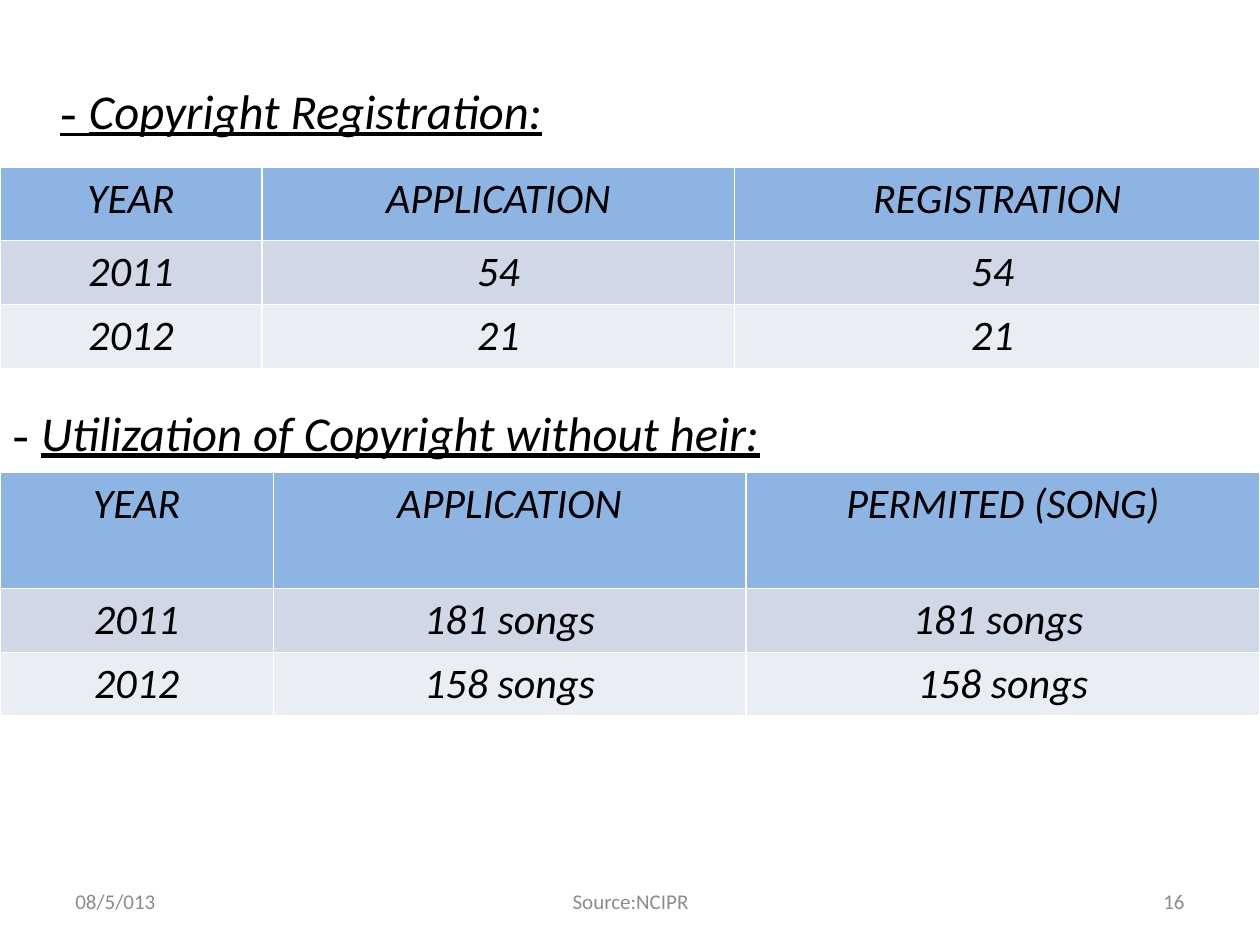
from lxml import etree
from pptx import Presentation
from pptx.dml.color import RGBColor
from pptx.enum.text import MSO_ANCHOR, MSO_AUTO_SIZE, PP_ALIGN
from pptx.oxml.ns import qn
from pptx.util import Inches, Pt

LEFT, CENTER, RIGHT = PP_ALIGN.LEFT, PP_ALIGN.CENTER, PP_ALIGN.RIGHT
MIDDLE = MSO_ANCHOR.MIDDLE
NO_AUTOFIT = MSO_AUTO_SIZE.NONE

BLACK = RGBColor(0x00, 0x00, 0x00)
GREY = RGBColor(0x8C, 0x8C, 0x8C)
HEADER_BLUE = RGBColor(0x8E, 0xB4, 0xE3)
BAND_DARK = RGBColor(0xD0, 0xD8, 0xE8)
BAND_LIGHT = RGBColor(0xE9, 0xED, 0xF4)
ROW_FILLS = [HEADER_BLUE, BAND_DARK, BAND_LIGHT]


def style_run(r, size, color, font="Calibri", italic=False, underline=False):
    r.font.size = Pt(size)
    r.font.name = font
    r.font.color.rgb = color
    r.font.bold = False
    r.font.italic = italic
    r.font.underline = underline


prs = Presentation()
prs.slide_width, prs.slide_height = Inches(10), Inches(7.5)
s = prs.slides.add_slide(prs.slide_layouts[1])
title = s.shapes.title
title.element.getparent().remove(title.element)

# Headings: text, left margin, first-line indent, space before, dash emphasised
headings = [
    ("Copyright Registration:", 0.38, 0, 0, True),
    ("Utilization of Copyright without heir:", 0.38, -0.38, 150.5, False),
]
body = s.placeholders[1]
body.left, body.top = Inches(0), Inches(0)
body.width, body.height = Inches(10), Inches(6.7)
tf = body.text_frame
tf.auto_size = NO_AUTOFIT
tf.word_wrap = True
tf.margin_top = Inches(0.64)
for i, (text, margin, indent, before, emphasis) in enumerate(headings):
    p = tf.add_paragraph() if i else tf.paragraphs[0]
    p.space_before = Pt(before)
    pPr = p._p.get_or_add_pPr()
    pPr.set("marL", str(Inches(margin)))
    pPr.set("indent", str(Inches(indent)))
    etree.SubElement(pPr, qn("a:buNone"))
    dash, label = p.add_run(), p.add_run()
    dash.text, label.text = "- ", text
    style_run(dash, 27.8, BLACK, "Times New Roman", emphasis, emphasis)
    style_run(label, 27.8, BLACK, italic=True, underline=True)

# Tables: top, column widths, row heights, rows
tables = [
    (1.33, [2.08, 3.75, 4.17], [0.58, 0.5, 0.5],
     [["YEAR", "APPLICATION", "REGISTRATION"],
      ["2011", "54", "54 "],
      ["2012", "21", "21 "]]),
    (3.75, [2.17, 3.75, 4.08], [0.92, 0.5, 0.5],
     [["YEAR", "APPLICATION", "PERMITED (SONG)"],
      ["2011", "181 songs", "181 songs "],
      ["2012", "158 songs", "158 songs"]]),
]
for top, widths, heights, rows in tables:
    table = s.shapes.add_table(len(rows), len(widths), Inches(0), Inches(top),
                               Inches(10), Inches(sum(heights))).table
    for column, width in zip(table.columns, widths):
        column.width = Inches(width)
    for i, (values, height, fill) in enumerate(zip(rows, heights, ROW_FILLS)):
        table.rows[i].height = Inches(height)
        for j, value in enumerate(values):
            cell = table.cell(i, j)
            cell.fill.solid()
            cell.fill.fore_color.rgb = fill
            cell.text = value
            p = cell.text_frame.paragraphs[0]
            p.alignment = CENTER
            style_run(p.runs[0], 24, BLACK, italic=True)

# Footer line: text, left, width, alignment
footers = [
    ("08/5/013", 0.5, 2.33, LEFT),
    ("Source:NCIPR", 3.42, 3.17, CENTER),
    ("16", 7.17, 2.33, RIGHT),
]
for text, left, width, align in footers:
    tf = s.shapes.add_textbox(Inches(left), Inches(6.95),
                              Inches(width), Inches(0.4)).text_frame
    tf.word_wrap = True
    tf.vertical_anchor = MIDDLE
    tf.text = text
    p = tf.paragraphs[0]
    p.alignment = align
    style_run(p.runs[0], 12, GREY)

prs.save("out.pptx")
